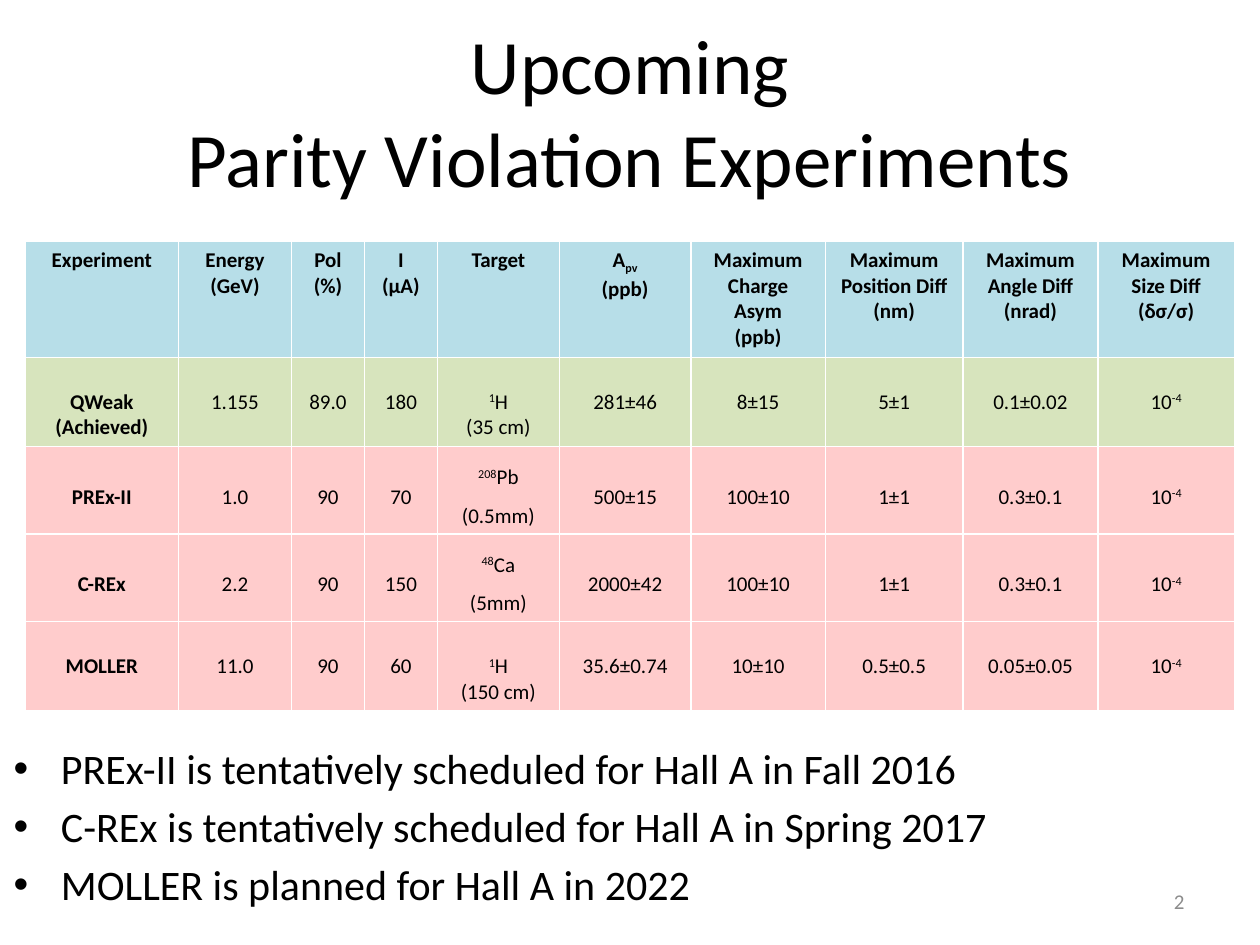
from dataclasses import dataclass
from lxml import etree
from pptx import Presentation, util as u
from pptx.dml.color import RGBColor
from pptx.enum import text as t
from pptx.oxml import ns

Pt = u.Pt


@dataclass
class Theme:
    face: str = "Calibri"
    ink: str = "000000"
    gray: str = "8C8C8C"
    head: str = "B7DEE8"
    done: str = "D7E4BD"
    plan: str = "FFCCCC"
    title: int = 44
    body: int = 24
    small: int = 12


look = Theme()


def style(font, size, color=look.ink, bold=False):
    for name, val in {"name": look.face, "size": Pt(size), "bold": bold}.items():
        setattr(font, name, val)
    font.color.rgb = RGBColor.from_string(color)


def write(para, line, bold):
    shift = {"^": "30000", "_": "-25000"}
    for part in line.split("|"):
        run = para.add_run()
        run.text = part.lstrip("^_")
        style(run.font, look.small, bold=bold)
        if part[0] in shift:
            run.font._element.set("baseline", shift[part[0]])


deck = Presentation()
deck.slide_width, deck.slide_height = Pt(720), Pt(540)
slide = deck.slides.add_slide(deck.slide_layouts[5])

title = slide.shapes.title
for name, val in {"left": 36, "top": 0, "width": 648, "height": 126}.items():
    setattr(title, name, Pt(val))
frame = title.text_frame
frame.text = "Upcoming\vParity Violation Experiments"
frame.auto_size = t.MSO_AUTO_SIZE.NONE
frame.vertical_anchor = t.MSO_ANCHOR.MIDDLE
frame.paragraphs[0].alignment = t.PP_ALIGN.CENTER
for run in frame.paragraphs[0].runs:
    style(run.font, look.title)

rows = [
    ["Experiment", "Energy\n(GeV)", "Pol\n(%)", "I\n(µA)", "Target", "A|_pv\n(ppb)",
     "Maximum Charge Asym\n(ppb)", "Maximum\nPosition Diff\n(nm)",
     "Maximum\nAngle Diff\n(nrad)", "Maximum\nSize Diff\n(δσ/σ)"],
    ["QWeak\n(Achieved)", "1.155", "89.0", "180", "^1|H\n(35 cm)", "281±46",
     "8±15", "5±1", "0.1±0.02", "10|^-4"],
    ["PREx-II", "1.0", "90", "70", "^208|Pb (0.5mm)", "500±15",
     "100±10", "1±1", "0.3±0.1", "10|^-4"],
    ["C-REx", "2.2", "90", "150", "^48|Ca\n(5mm)", "2000±42",
     "100±10", "1±1", "0.3±0.1", "10|^-4"],
    ["MOLLER", "11.0", "90", "60", "^1|H\n(150 cm)", "35.6±0.74",
     "10±10", "0.5±0.5", "0.05±0.05", "10|^-4"],
]
top = dict(vertical_anchor=t.MSO_ANCHOR.TOP, margin_top=Pt(3.6))
low = dict(vertical_anchor=t.MSO_ANCHOR.TOP, margin_top=Pt(18.2))
mid = dict(vertical_anchor=t.MSO_ANCHOR.MIDDLE, margin_left=Pt(5.4),
           margin_right=Pt(5.4), margin_top=Pt(2.7), margin_bottom=Pt(2.7))
kinds = [(66.2, look.head, top, 1), (50, look.done, low, 1), (50, look.plan, mid, 1.5),
         (50, look.plan, mid, 1.5), (50, look.plan, low, 1)]
wide = [87.6, 64.6, 41.7, 41.7, 69.7, 75.2, 76.8, 78.7, 77.1, 78]

grid = slide.shapes.add_table(len(rows), len(wide), Pt(14.4), Pt(138),
                              Pt(sum(wide)), Pt(266.2)).table
grid.horz_banding = False
for col, width in zip(grid.columns, wide):
    col.width = Pt(width)
for i, (row, (high, color, form, gap)) in enumerate(zip(rows, kinds)):
    grid.rows[i].height = Pt(high)
    for j, label in enumerate(row):
        cell = grid.cell(i, j)
        cell.fill.solid()
        cell.fill.fore_color.rgb = RGBColor.from_string(color)
        for name, val in form.items():
            setattr(cell, name, val)
        for k, line in enumerate(label.split("\n")):
            para = cell.text_frame.add_paragraph() if k else cell.text_frame.paragraphs[0]
            para.alignment = t.PP_ALIGN.CENTER
            if gap > 1:
                para.line_spacing = gap
            write(para, line, i == 0 or j == 0)

notes = ["PREx-II is tentatively scheduled for Hall A in Fall 2016",
         "C-REx is tentatively scheduled for Hall A in Spring 2017",
         "MOLLER is planned for Hall A in 2022"]
frame = slide.shapes.add_textbox(Pt(0.7), Pt(421), Pt(719), Pt(119)).text_frame
frame.word_wrap = True
for k, line in enumerate(notes):
    para = frame.add_paragraph() if k else frame.paragraphs[0]
    props = para._p.get_or_add_pPr()
    props.set("marL", str(Pt(27)))
    props.set("indent", str(Pt(-27)))
    etree.SubElement(props, ns.qn("a:buFont")).set("typeface", "Arial")
    etree.SubElement(props, ns.qn("a:buChar")).set("char", "•")
    if k:
        para.space_before = Pt(4.2)
    run = para.add_run()
    run.text = line
    style(run.font, look.body)

frame = slide.shapes.add_textbox(Pt(516), Pt(500.5), Pt(168), Pt(28.8)).text_frame
frame.word_wrap = True
frame.vertical_anchor = t.MSO_ANCHOR.MIDDLE
para = frame.paragraphs[0]
para.alignment = t.PP_ALIGN.RIGHT
run = para.add_run()
run.text = "2"
style(run.font, look.small, look.gray)

deck.save("out.pptx")
